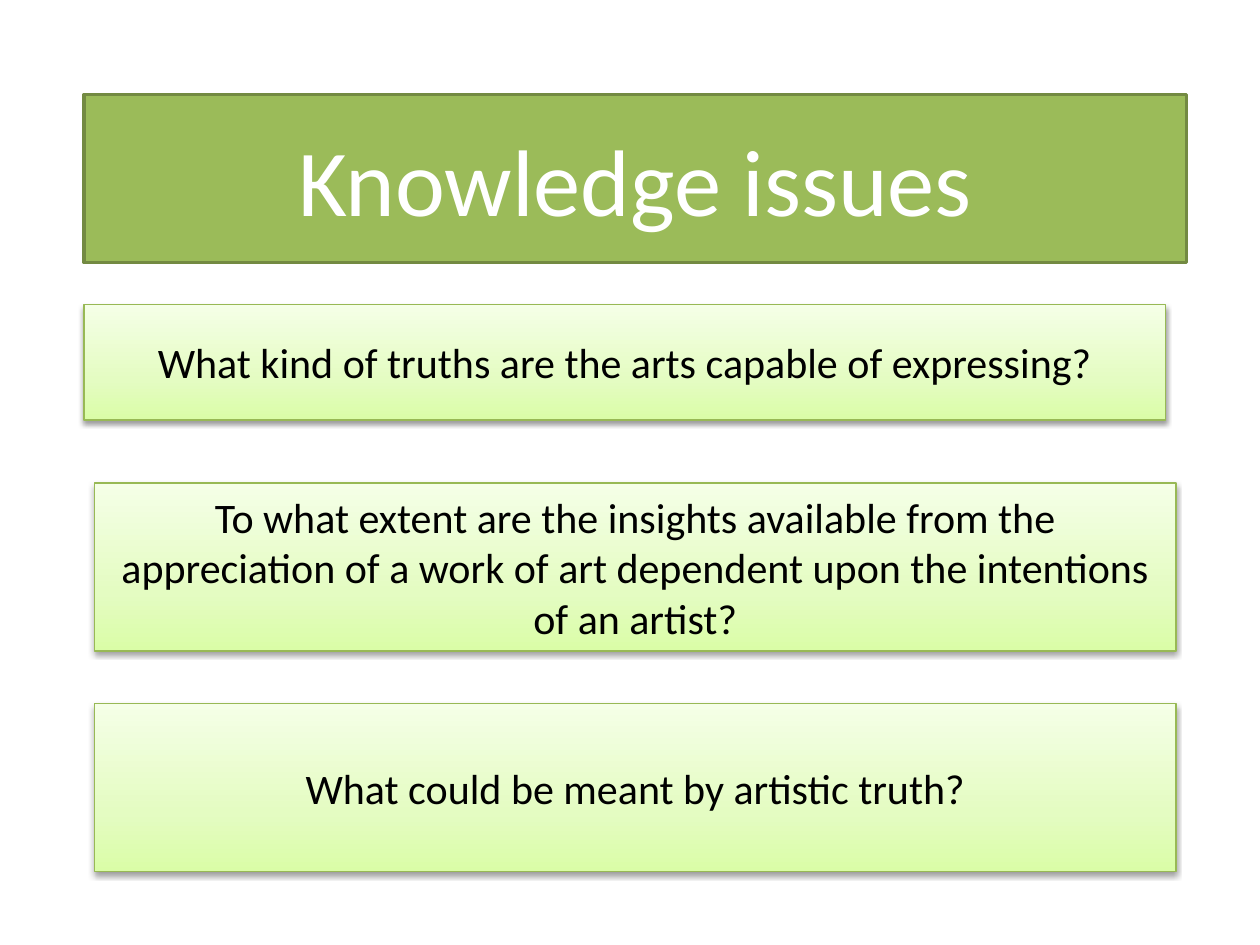
"""Build the knowledge issues slide: a title banner above three question panels."""
from dataclasses import dataclass

from lxml.etree import SubElement
from pptx import Presentation
from pptx.dml.color import RGBColor
from pptx.enum.shapes import MSO_SHAPE
from pptx.enum.text import MSO_ANCHOR, PP_ALIGN
from pptx.oxml.ns import qn
from pptx.util import Pt

COLORS = {
    "banner": "9BBB59",
    "banner_line": "738A42",
    "panel_line": "98B955",
    "panel_bottom": "DAFDA7",
    "panel_middle": "E4FCC2",
    "panel_top": "F5FFE7",
    "title": "FFFFFF",
    "question": "000000",
}
GRADIENT = {0: "panel_bottom", 35: "panel_middle", 100: "panel_top"}


@dataclass
class Panel:
    text: str
    left: float
    top: float
    height: float
    width: float = 618


PANELS = [
    Panel("What kind of truths are the arts capable of expressing?", 48, 174, 66),
    Panel("To what extent are the insights available from the appreciation of a work "
          "of art dependent upon the intentions of an artist?", 54, 276, 96),
    Panel("What could be meant by artistic truth?", 54, 402, 96),
]


def rgb(name: str) -> RGBColor:
    return RGBColor.from_string(COLORS[name])


def add_box(s, box: Panel, line: str, line_width: float, size: float, color: str):
    sp = s.shapes.add_shape(MSO_SHAPE.RECTANGLE, Pt(box.left), Pt(box.top),
                            Pt(box.width), Pt(box.height))
    sp.shadow.inherit = False
    sp.line.color.rgb = rgb(line)
    sp.line.width = Pt(line_width)
    tf = sp.text_frame
    tf.word_wrap = True
    tf.vertical_anchor = MSO_ANCHOR.MIDDLE
    p = tf.paragraphs[0]
    p.alignment = PP_ALIGN.CENTER
    r = p.add_run()
    r.text = box.text
    r.font.name = "Calibri"
    r.font.size = Pt(size)
    r.font.color.rgb = rgb(color)
    return sp


def add_gradient(sp) -> None:
    sp.fill.gradient()
    sp.fill.gradient_angle = 90
    stops = sp._element.spPr.find(".//" + qn("a:gsLst"))
    for stop in list(stops):
        stops.remove(stop)
    for position, name in GRADIENT.items():
        stop = SubElement(stops, qn("a:gs"), pos=str(position * 1000))
        SubElement(stop, qn("a:srgbClr"), val=COLORS[name])


def add_shadow(sp) -> None:
    effects = sp._element.spPr.find(qn("a:effectLst"))
    shadow = SubElement(effects, qn("a:outerShdw"), blurRad=str(Pt(3.1)),
                        dist=str(Pt(1.6)), dir="5400000", rotWithShape="0")
    color = SubElement(shadow, qn("a:srgbClr"), val="000000")
    SubElement(color, qn("a:alpha"), val="38000")


def main() -> None:
    prs = Presentation()
    prs.slide_width, prs.slide_height = Pt(720), Pt(540)
    s = prs.slides.add_slide(prs.slide_layouts[6])
    banner = add_box(s, Panel("Knowledge issues", 48, 54, 96, 630),
                     "banner_line", 2, 54, "title")
    banner.fill.solid()
    banner.fill.fore_color.rgb = rgb("banner")
    for panel in PANELS:
        sp = add_box(s, panel, "panel_line", 0.75, 24, "question")
        add_gradient(sp)
        add_shadow(sp)
    prs.save("out.pptx")


if __name__ == "__main__":
    main()
